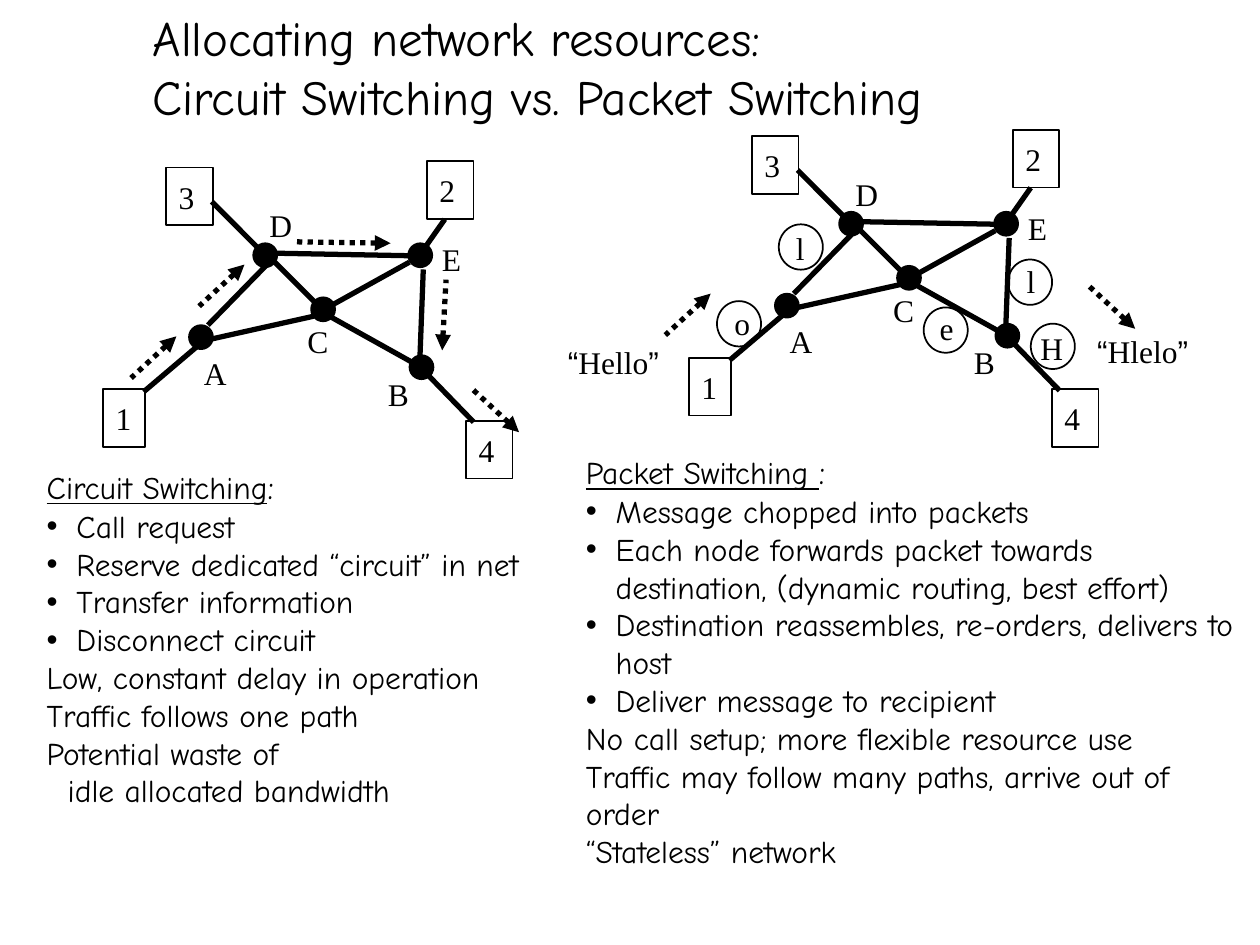
"""Builds a slide comparing circuit switching with packet switching."""
from pptx import Presentation
from pptx.dml.color import RGBColor
from pptx.enum.dml import MSO_LINE
from pptx.enum.shapes import MSO_CONNECTOR, MSO_SHAPE
from pptx.enum.text import MSO_ANCHOR, MSO_AUTO_SIZE, PP_ALIGN
from pptx.oxml.ns import qn
from pptx.util import Pt
from lxml import etree

BLACK = RGBColor(0, 0, 0)
STRAIGHT = MSO_CONNECTOR.STRAIGHT
OVAL = MSO_SHAPE.OVAL
RECTANGLE = MSO_SHAPE.RECTANGLE
MIDDLE = MSO_ANCHOR.MIDDLE
TOP = MSO_ANCHOR.TOP
LEFT = PP_ALIGN.LEFT
NO_AUTOFIT = MSO_AUTO_SIZE.NONE
DOTTED = MSO_LINE.ROUND_DOT

HEADING_FONT = "Comic Neue"
LABEL_FONT = "Times New Roman"
QUOTE_FONT = "Arial"

NODE_SIZE = 13.7
PACKET_SIZE = (25.2, 25.9)
NODES = [(144.7, 139), (108, 185.8), (177.8, 169.9), (233.3, 139), (234, 203)]
HOSTS = [("1", 59, 222.5, 23.8), ("2", 244, 92.2, 26.6),
         ("3", 95, 95.8, 26.6), ("4", 266.4, 240.5, 26.6)]
LINKS = [
    (121, 193.7, 179.3, 180.7), (190, 174.2, 234, 149.8),
    (239.8, 208.8, 241.9, 154), (185, 177.8, 157, 149.8),
    (270.7, 241.2, 243.4, 213.1), (149, 143.3, 121, 115.2),
    (115.2, 195.8, 82.1, 223.9), (239, 146.9, 254.2, 125.3),
    (185.8, 179.3, 241.2, 210.2), (152.6, 151.2, 118.8, 185.8),
    (236.9, 146.2, 157, 144.7),
]
NODE_LABELS = [("A", 109.4, 196.6, 27.4), ("B", 214.6, 208.8, 25.9),
               ("C", 168.5, 178.6, 25.2), ("D", 146.9, 112.3, 27.4),
               ("E", 245.5, 131.8, 25.9)]
NETWORK_OFFSETS = [(0, 0), (334.8, -18)]
FLOW_ARROWS = [
    (100.8, 192.2, 74.9, 216), (223.2, 139, 169.2, 138.2),
    (252.7, 200.2, 254.9, 159.8), (139.7, 151.2, 113.8, 175),
    (296.6, 247, 269.3, 221.8), (648.7, 187.9, 621.4, 162.7),
    (406.1, 167.8, 380.2, 191.5),
]
PACKET_LETTERS = [("H", 587.5, 184.3, 28.8), ("e", 529.9, 172.8, 22.3),
                  ("l", 447.8, 127.4, 18.7), ("l", 579.6, 146.2, 18.7),
                  ("o", 412.6, 169.9, 23.8)]
PACKETS = [(589, 185), (576, 148.3), (527.8, 175.7), (445, 128.2), (409.7, 172.1)]
MESSAGES = [("“Hello”", 317.5, 190.8), ("“Hlelo”", 619.9, 184.3)]

BULLET, PLAIN, INDENTED = (17, -17), (0, 0), (12, 0)
CIRCUIT_LINES = [
    ("Call request", BULLET),
    ("Reserve dedicated “circuit” in net", BULLET),
    ("Transfer information", BULLET),
    ("Disconnect circuit", BULLET),
    ("Low, constant delay in operation", PLAIN),
    ("Traffic follows one path", PLAIN),
    ("Potential waste of", PLAIN),
    ("idle allocated bandwidth", INDENTED),
]
PACKET_LINES = [
    ("Message chopped into packets", BULLET),
    ("Each node forwards packet towards destination, "
     "(dynamic routing, best effort)", BULLET),
    ("Destination reassembles, re-orders, delivers to host", BULLET),
    ("Deliver message to recipient", BULLET),
    ("No call setup; more flexible resource use", PLAIN),
    ("Traffic may follow many paths, arrive out of order", PLAIN),
    ("“Stateless” network", PLAIN),
]


class NetworkSlide:
    """Holds the slide and the style of its elements."""

    def __init__(self, slide):
        self.slide = slide
        self.shapes = slide.shapes

    def format_run(self, run, size, font):
        run.font.size = Pt(size)
        run.font.name = font
        run.font.color.rgb = BLACK

    def place(self, shape, left, top, width, height):
        shape.left, shape.top = Pt(left), Pt(top)
        shape.width, shape.height = Pt(width), Pt(height)

    def title(self, text, *box):
        title = self.shapes.title
        self.place(title, *box)
        frame = title.text_frame
        frame.text = text
        frame.auto_size = NO_AUTOFIT
        frame.vertical_anchor = MIDDLE
        paragraph = frame.paragraphs[0]
        paragraph.alignment = LEFT
        for run in paragraph.runs:
            self.format_run(run, 28, HEADING_FONT)

    def body(self, index, heading, lines, *box):
        placeholder = self.slide.placeholders[index]
        self.place(placeholder, *box)
        frame = placeholder.text_frame
        frame.word_wrap = True
        frame.auto_size = NO_AUTOFIT
        frame.vertical_anchor = TOP
        frame.text = "\n".join([heading] + [text for text, _ in lines])
        layouts = [PLAIN] + [layout for _, layout in lines]
        for paragraph, layout in zip(frame.paragraphs, layouts):
            paragraph.space_before = Pt(0)
            self.indent(paragraph, layout)
            self.format_run(paragraph.runs[0], 18, HEADING_FONT)
        first = frame.paragraphs[0]
        first.runs[0].font.underline = True
        colon = first.add_run()
        colon.text = ":"
        self.format_run(colon, 20, HEADING_FONT)

    def indent(self, paragraph, layout):
        margin, hanging = layout
        properties = paragraph._p.get_or_add_pPr()
        properties.set("marL", str(Pt(margin)))
        properties.set("indent", str(Pt(hanging)))
        if layout != BULLET:
            etree.SubElement(properties, qn("a:buNone"))

    def shape(self, kind, left, top, width, height, filled=False):
        shape = self.shapes.add_shape(kind, Pt(left), Pt(top), Pt(width), Pt(height))
        shape.shadow.inherit = False
        shape.line.color.rgb = BLACK
        shape.line.width = Pt(1)
        if filled:
            shape.fill.solid()
            shape.fill.fore_color.rgb = BLACK
        else:
            shape.fill.background()
        return shape

    def set_text(self, shape, parts):
        frame = shape.text_frame
        frame.word_wrap = False
        frame.vertical_anchor = MIDDLE
        paragraph = frame.paragraphs[0]
        paragraph.alignment = LEFT
        for text, font in parts:
            run = paragraph.add_run()
            run.text = text
            self.format_run(run, 18, font)

    def host(self, name, left, top, width):
        self.set_text(self.shape(RECTANGLE, left, top, width, 33), [(name, LABEL_FONT)])

    def label(self, parts, left, top, width, height=32.4):
        box = self.shapes.add_textbox(Pt(left), Pt(top), Pt(width), Pt(height))
        self.set_text(box, parts)

    def line(self, points, arrow=False):
        connector = self.shapes.add_connector(STRAIGHT, *map(Pt, points))
        connector.line.color.rgb = BLACK
        connector.line.width = Pt(3)
        if arrow:
            connector.line.dash_style = DOTTED
            head = etree.SubElement(connector.line._get_or_add_ln(), qn("a:headEnd"))
            head.set("type", "triangle")
        etree.SubElement(connector._element.spPr, qn("a:effectLst"))

    def network(self, dx, dy):
        for left, top in NODES:
            self.shape(OVAL, left + dx, top + dy, NODE_SIZE, NODE_SIZE, filled=True)
        for name, left, top, width in HOSTS:
            self.host(name, left + dx, top + dy, width)
        for x1, y1, x2, y2 in LINKS:
            self.line((x1 + dx, y1 + dy, x2 + dx, y2 + dy))
        for name, left, top, width in NODE_LABELS:
            self.label([(name, LABEL_FONT)], left + dx, top + dy, width)


def main():
    presentation = Presentation()
    presentation.slide_width, presentation.slide_height = Pt(720), Pt(540)
    page = NetworkSlide(presentation.slides.add_slide(presentation.slide_layouts[3]))
    page.title("Allocating network resources:\vCircuit Switching vs. Packet Switching",
               80, 15, 588, 46)
    page.body(1, "Circuit Switching", CIRCUIT_LINES, 19.5, 262, 310, 206)
    page.body(2, "Packet Switching ", PACKET_LINES, 327.6, 253.5, 392.4, 250)
    for dx, dy in NETWORK_OFFSETS:
        page.network(dx, dy)
    for points in FLOW_ARROWS:
        page.line(points, arrow=True)
    for letter, left, top, width in PACKET_LETTERS:
        page.label([(letter, LABEL_FONT)], left, top, width, 28.8)
    for left, top in PACKETS:
        page.shape(OVAL, left, top, *PACKET_SIZE)
    for text, left, top in MESSAGES:
        parts = [(text[0], QUOTE_FONT), (text[1:-1], LABEL_FONT), (text[-1], QUOTE_FONT)]
        page.label(parts, left, top, 69.8)
    presentation.save("out.pptx")


if __name__ == "__main__":
    main()
